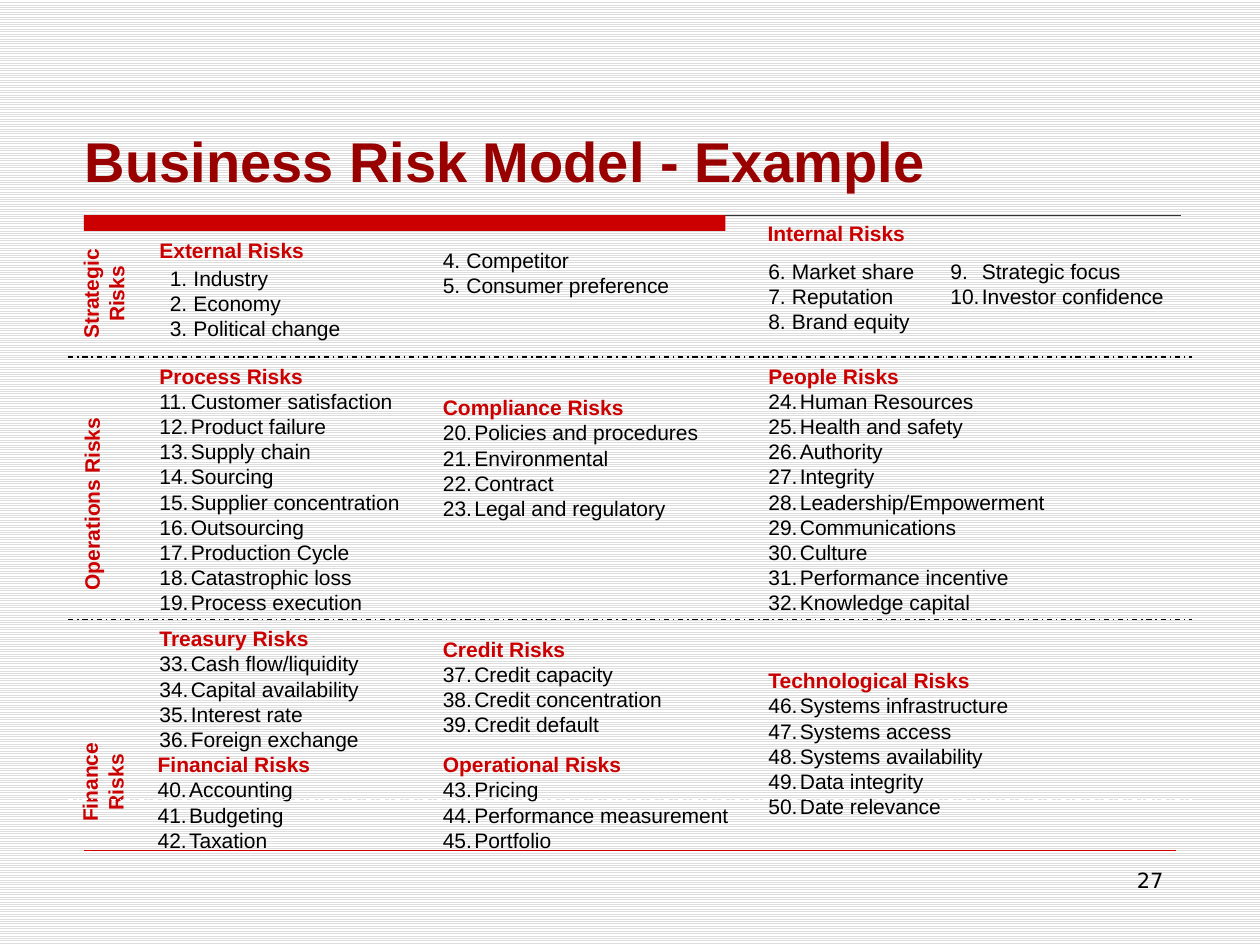
from typing import NamedTuple

from lxml.etree import SubElement
from pptx import Presentation
from pptx.dml.color import RGBColor
from pptx.enum.dml import MSO_LINE, MSO_PATTERN
from pptx.enum.shapes import MSO_CONNECTOR, MSO_SHAPE
from pptx.enum.text import MSO_ANCHOR, MSO_AUTO_SIZE, PP_ALIGN
from pptx.oxml.ns import qn
from pptx.util import Pt

COLORS = {"heading": "CC0000", "title": "990000", "text": "000000",
          "paper": "FFFFFF", "stripe": "DDDDDD", "rule": "333333"}
LINE_HEIGHT = 14.4
INSETS = 7.2
NARROW, WIDE = 13.5, 18
COL_1, COL_2, COL_3, COL_4 = 84, 246, 432, 536


class RiskList(NamedTuple):
    left: float
    top: float
    width: float
    heading: str
    start: int = 1
    items: tuple[str, ...] = ()
    indent: float = WIDE


class AreaLabel(NamedTuple):
    left: float
    top: float
    width: float
    height: float
    lines: tuple[str, ...]
    spacing: float


class Rule(NamedTuple):
    left: float
    right: float
    y: float
    color: str
    weight: float = 0.75
    dashed: bool = False


RISK_LISTS = (
    RiskList(90, 148, 180, "", 1,
             ("Industry", "Economy", "Political change"), NARROW),
    RiskList(COL_3, 144, 180, "", 6,
             ("Market share", "Reputation", "Brand equity"), NARROW),
    RiskList(COL_1, 204, 192, "Process Risks", 11,
             ("Customer satisfaction", "Product failure", "Supply chain",
              "Sourcing", "Supplier concentration", "Outsourcing",
              "Production Cycle", "Catastrophic loss", "Process execution")),
    RiskList(COL_2, 222, 168, "Compliance Risks", 20,
             ("Policies and procedures", "Environmental", "Contract",
              "Legal and regulatory")),
    RiskList(COL_3, 204, 240, "People Risks", 24,
             ("Human Resources", "Health and safety", "Authority",
              "Integrity", "Leadership/Empowerment", "Communications",
              "Culture", "Performance incentive", "Knowledge capital")),
    RiskList(83, 426, 162, "Financial Risks", 40,
             ("Accounting", "Budgeting", "Taxation")),
    RiskList(COL_2, 426, 180, "Operational Risks", 43,
             ("Pricing", "Performance measurement", "Portfolio")),
    RiskList(COL_3, 378, 156, "Technological Risks", 46,
             ("Systems infrastructure", "Systems access",
              "Systems availability", "Data integrity", "Date relevance")),
    RiskList(COL_1, 354, 156, "Treasury Risks", 33,
             ("Cash flow/liquidity", "Capital availability",
              "Interest rate", "Foreign exchange")),
    RiskList(COL_2, 360, 186, "Credit Risks", 37,
             ("Credit capacity", "Credit concentration", "Credit default")),
    RiskList(COL_2, 138, 174, "", 4,
             ("Competitor", "Consumer preference"), NARROW),
    RiskList(COL_1, 132, 270, "External Risks"),
    RiskList(COL_4, 144, 180, "", 9,
             ("Strategic focus", "Investor confidence")),
    RiskList(431.5, 122.4, 240, "Internal Risks"),
)
AREA_LABELS = (
    AreaLabel(2, 152, 120, 32, ("Strategic", "Risks"), 0.6),
    AreaLabel(-19.5, 277, 144, 22, ("Operations Risks",), 1),
    AreaLabel(-1, 431, 125, 32, ("Finance", "Risks"), 0.6),
)
RULES = (
    Rule(48, 675, 123, "rule"),
    Rule(48, 672, 486, "heading", 0.25),
    Rule(39, 681, 204, "text", dashed=True),
    Rule(39, 681, 354, "text", dashed=True),
    Rule(39, 681, 457, "paper", dashed=True),
)


def rgb(name: str) -> RGBColor:
    return RGBColor.from_string(COLORS[name])


def write(paragraph, text: str, *, size: float = 12, color: str = "text",
          bold: bool = False, font: str = "Arial", align=PP_ALIGN.LEFT,
          spacing: float = 1, before: float = 0) -> None:
    paragraph.alignment = align
    paragraph.line_spacing = spacing
    paragraph.space_before = Pt(before)
    run = paragraph.add_run()
    run.text = text
    run.font.size = Pt(size)
    run.font.name = font
    run.font.bold = bold
    run.font.color.rgb = rgb(color)


def number(paragraph, start: int, indent: float) -> None:
    """Give the paragraph an automatic number and a hanging indent."""
    properties = paragraph._p.get_or_add_pPr()
    properties.set("marL", str(Pt(indent)))
    properties.set("indent", str(-Pt(indent)))
    SubElement(properties, qn("a:buFont"), typeface="+mj-lt")
    SubElement(properties, qn("a:buAutoNum"), type="arabicPeriod",
               startAt=str(start))


def add_box(slide, left: float, top: float, width: float, height: float):
    box = slide.shapes.add_textbox(Pt(left), Pt(top), Pt(width), Pt(height))
    box.text_frame.word_wrap = True
    return box


def next_paragraph(frame, index: int):
    return frame.add_paragraph() if index else frame.paragraphs[0]


def add_risk_list(slide, risks: RiskList) -> None:
    headings = [risks.heading] if risks.heading else []
    height = LINE_HEIGHT * (len(headings) + len(risks.items)) + INSETS
    frame = add_box(slide, risks.left, risks.top, risks.width, height).text_frame
    for heading in headings:
        write(frame.paragraphs[0], heading, color="heading", bold=True)
    for index, item in enumerate(risks.items, len(headings)):
        paragraph = next_paragraph(frame, index)
        write(paragraph, item)
        number(paragraph, risks.start, risks.indent)


def add_area_label(slide, label: AreaLabel) -> None:
    box = add_box(slide, label.left, label.top, label.width, label.height)
    box.rotation = 270
    for index, line in enumerate(label.lines):
        write(next_paragraph(box.text_frame, index), line, color="heading",
              bold=True, align=PP_ALIGN.CENTER, spacing=label.spacing,
              before=6 if index else 0)


def add_rule(slide, rule: Rule) -> None:
    line = slide.shapes.add_connector(MSO_CONNECTOR.STRAIGHT, Pt(rule.left),
                                      Pt(rule.y), Pt(rule.right), Pt(rule.y))
    line.line.color.rgb = rgb(rule.color)
    line.line.width = Pt(rule.weight)
    if rule.dashed:
        line.line.dash_style = MSO_LINE.DASH_DOT
    SubElement(line._element.spPr, qn("a:effectLst"))


def add_title_bar(slide) -> None:
    bar = slide.shapes.add_shape(MSO_SHAPE.RECTANGLE, Pt(48), Pt(123),
                                 Pt(366.5), Pt(9))
    bar.shadow.inherit = False
    bar.fill.solid()
    bar.fill.fore_color.rgb = rgb("heading")
    bar.line.fill.background()


def set_title(slide, text: str) -> None:
    title = slide.shapes.title
    title.left, title.top, title.width, title.height = map(
        Pt, (32.5, 42, 663, 72.5))
    frame = title.text_frame
    frame.auto_size = MSO_AUTO_SIZE.NONE
    frame.vertical_anchor = MSO_ANCHOR.BOTTOM
    frame.margin_left = Pt(16)
    write(frame.paragraphs[0], text, size=32, color="title", bold=True)


def main() -> None:
    deck = Presentation()
    deck.slide_width, deck.slide_height = Pt(720), Pt(540)
    slide = deck.slides.add_slide(deck.slide_layouts[5])
    paper = slide.background.fill
    paper.patterned()
    paper.pattern = MSO_PATTERN.LIGHT_HORIZONTAL
    paper.fore_color.rgb = rgb("stripe")
    paper.back_color.rgb = rgb("paper")

    set_title(slide, "Business Risk Model - Example")
    for label in AREA_LABELS:
        add_area_label(slide, label)
    for risks in RISK_LISTS:
        add_risk_list(slide, risks)
    for rule in RULES:
        add_rule(slide, rule)
    add_title_bar(slide)
    page_number = add_box(slide, 516, 492, 156, 37.5).text_frame.paragraphs[0]
    write(page_number, "27", font="DejaVu Sans", align=PP_ALIGN.RIGHT)
    deck.save("out.pptx")


if __name__ == "__main__":
    main()
